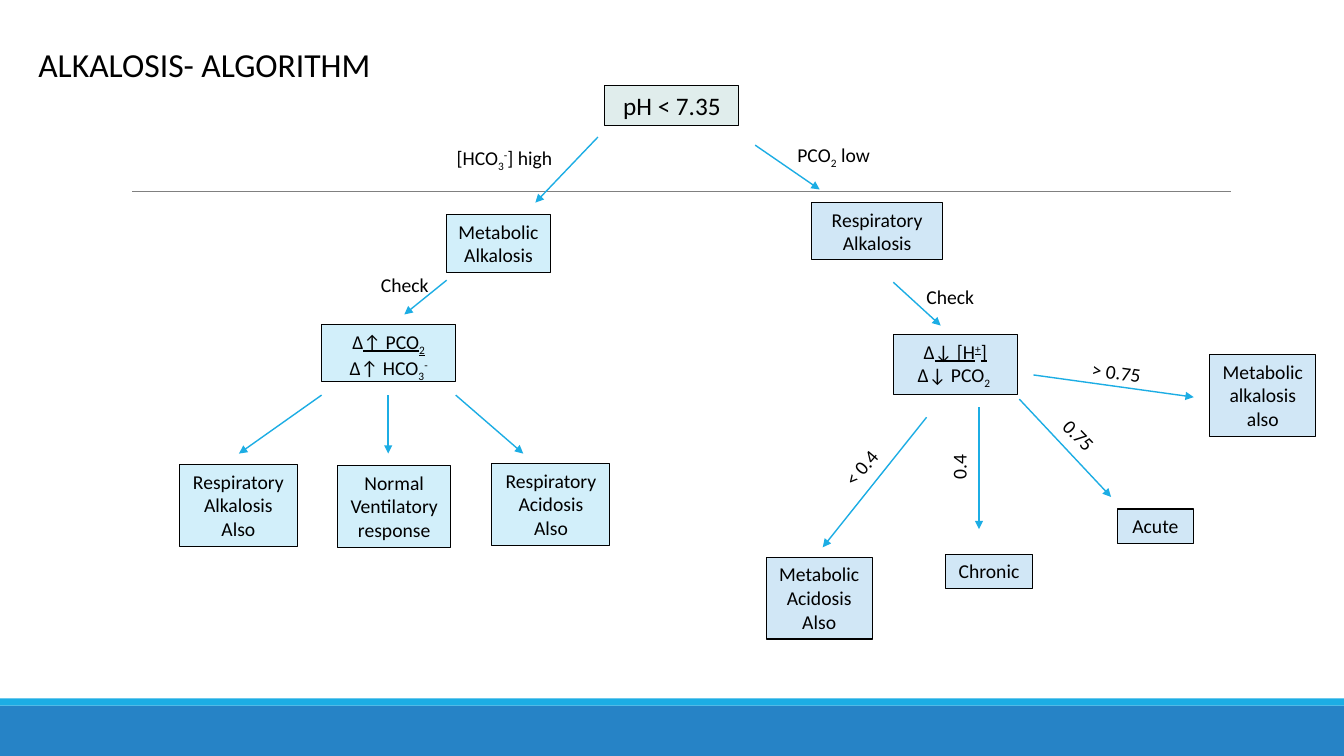
from dataclasses import dataclass

from lxml import etree
from pptx import Presentation
from pptx.dml.color import RGBColor
from pptx.enum.shapes import MSO_CONNECTOR, MSO_SHAPE
from pptx.enum.text import MSO_ANCHOR, MSO_AUTO_SIZE, PP_ALIGN
from pptx.oxml.ns import qn
from pptx.util import Inches, Pt

RECT = MSO_SHAPE.RECTANGLE
STRAIGHT = MSO_CONNECTOR.STRAIGHT
LEFT, CENTER = PP_ALIGN.LEFT, PP_ALIGN.CENTER
TOP = MSO_ANCHOR.TOP
NO_FIT = MSO_AUTO_SIZE.NONE
TITLE_ONLY = 5
SUB, SUP = -25, 30  # baseline shift in percent


@dataclass(frozen=True)
class Theme:
    font: str = "Calibri"
    text: str = "000000"
    root: str = "E0EDEC"
    metabolic: str = "D2EFFA"
    respiratory: str = "D1E7F6"
    accent: str = "1CADE4"
    footer: str = "2683C6"
    rule: str = "808080"
    title_size: int = 24
    root_size: int = 18
    body_size: int = 14


THEME = Theme()


def color(code):
    return RGBColor.from_string(code)


def run(text, shift=0, underline=False):
    return text, shift, underline


def write(tf, paragraphs, size=THEME.body_size, align=LEFT):
    """Fill a frame; a paragraph is a string or a list of run() items."""
    tf.word_wrap = True
    tf.auto_size = NO_FIT
    tf.vertical_anchor = TOP
    for i, content in enumerate(paragraphs):
        p = tf.add_paragraph() if i else tf.paragraphs[0]
        p.alignment = align
        runs = [run(content)] if isinstance(content, str) else content
        for text, shift, underline in runs:
            r = p.add_run()
            r.text = text
            r.font.name = THEME.font
            r.font.size = Pt(size)
            r.font.color.rgb = color(THEME.text)
            if underline:
                r.font.underline = True
            if shift:
                r._r.get_or_add_rPr().set("baseline", str(shift * 1000))


def add_rect(s, at, fill, outline=None):
    sp = s.shapes.add_shape(RECT, *map(Inches, at))
    sp.shadow.inherit = False
    sp.fill.solid()
    sp.fill.fore_color.rgb = color(fill)
    if outline:
        sp.line.color.rgb = color(outline)
        sp.line.width = Pt(0.75)
    else:
        sp.line.fill.background()
    return sp


def add_box(s, at, fill, *paragraphs, size=THEME.body_size):
    sp = add_rect(s, at, fill, outline=THEME.text)
    write(sp.text_frame, paragraphs, size=size, align=CENTER)


def add_label(s, at, content, rotation=0):
    sp = s.shapes.add_textbox(*map(Inches, at))
    sp.rotation = rotation
    write(sp.text_frame, [content])


def add_line(s, start, end, stroke=THEME.accent, width=1, arrow=True):
    cx = s.shapes.add_connector(STRAIGHT, *map(Inches, start + end))
    cx.line.color.rgb = color(stroke)
    cx.line.width = Pt(width)
    if arrow:
        etree.SubElement(cx.line._get_or_add_ln(), qn("a:tailEnd"), type="triangle")
    etree.SubElement(cx._element.spPr, qn("a:effectLst"))


def add_title(s, text):
    sp = s.shapes.title
    sp.left, sp.top, sp.width, sp.height = map(Inches, (0.28, 0.39, 4.59, 0.5))
    write(sp.text_frame, [text], size=THEME.title_size)


def add_background(s):
    add_rect(s, (0, 7, 13.33, 0.5), THEME.footer)
    add_rect(s, (0, 6.93, 13.33, 0.07), THEME.accent)
    add_line(s, (1.31, 1.9), (12.21, 1.9), stroke=THEME.rule, width=0.5, arrow=False)


def add_root(s):
    add_box(s, (6, 0.85, 1.33, 0.4), THEME.root, "pH < 7.35", size=THEME.root_size)
    add_line(s, (5.93, 1.36), (5.31, 2.01))
    add_line(s, (7.49, 1.44), (8.13, 1.88))
    add_label(s, (4.43, 1.4, 1.33, 0.34),
              [run("[HCO"), run("3", SUB), run("-", SUP), run("] high")])
    add_label(s, (7.81, 1.37, 1.82, 0.34), [run("PCO"), run("2", SUB), run(" low")])


def add_metabolic_branch(s):
    fill = THEME.metabolic
    add_box(s, (4.43, 2.13, 1.03, 0.57), fill, "Metabolic Alkalosis")
    add_line(s, (4.43, 2.78), (4.01, 3.12))
    add_label(s, (3.68, 2.66, 0.93, 0.34), "Check")
    add_box(s, (3.19, 3.22, 1.33, 0.57), fill,
            [run("Δ"), run("↑ PCO", underline=True), run("2", SUB, True)],
            [run("Δ↑ HCO"), run("3", SUB), run("-", SUP)])

    # Outcomes: box and arrow from the ratio
    outcomes = [
        ((1.78, 4.61, 1.17, 0.81), ["Respiratory", "Alkalosis Also"], 3.19, 2.37),
        ((3.35, 4.62, 1.12, 0.81), ["Normal Ventilatory response"], 3.85, 3.85),
        ((4.88, 4.6, 1.17, 0.81), ["Respiratory Acidosis Also"], 4.52, 5.19),
    ]
    for at, paragraphs, x1, x2 in outcomes:
        add_box(s, at, fill, *paragraphs)
        add_line(s, (x1, 3.92), (x2, 4.5))


def add_respiratory_branch(s):
    fill = THEME.respiratory
    add_box(s, (8.05, 2.01, 1.3, 0.57), fill, "Respiratory Alkalosis")
    add_line(s, (8.86, 2.8), (9.33, 3.23))
    add_label(s, (9.09, 2.78, 0.93, 0.34), "Check")
    add_box(s, (8.86, 3.32, 1.23, 0.59), fill,
            [run("Δ"), run("↓ [H", underline=True), run("+", SUP, True),
             run("]", underline=True)],
            [run("Δ↓ PCO"), run("2 ", SUB)])

    # Outcomes: box, arrow from the ratio, and threshold along the arrow
    outcomes = [
        ((7.6, 5.53, 1.05, 0.81), "Metabolic Acidosis Also",
         (9.19, 4.14), (8.16, 5.43), (8.19, 4.34, 0.93, 0.34), "< 0.4", 310.4),
        ((9.38, 5.5, 0.86, 0.34), "Chronic",
         (9.71, 4.04), (9.71, 5.25), (9.25, 4.42, 0.53, 0.34), "0.4", 270),
        ((11.08, 5.05, 0.76, 0.34), "Acute",
         (10.11, 3.96), (11.02, 4.93), (10.37, 4.29, 0.93, 0.34), "0.75", 46),
        ((12, 3.52, 1.05, 0.81), "Metabolic alkalosis also",
         (10.25, 3.72), (11.84, 3.94), (10.73, 3.54, 0.93, 0.34), "> 0.75", 7.5),
    ]
    for at, text, start, end, label_at, threshold, rotation in outcomes:
        add_box(s, at, fill, text)
        add_line(s, start, end)
        add_label(s, label_at, threshold, rotation=rotation)


def main():
    prs = Presentation()
    prs.slide_width, prs.slide_height = Inches(13.33), Inches(7.5)
    s = prs.slides.add_slide(prs.slide_layouts[TITLE_ONLY])
    add_background(s)
    add_title(s, "ALKALOSIS- ALGORITHM")
    add_root(s)
    add_metabolic_branch(s)
    add_respiratory_branch(s)
    prs.save("out.pptx")


if __name__ == "__main__":
    main()
